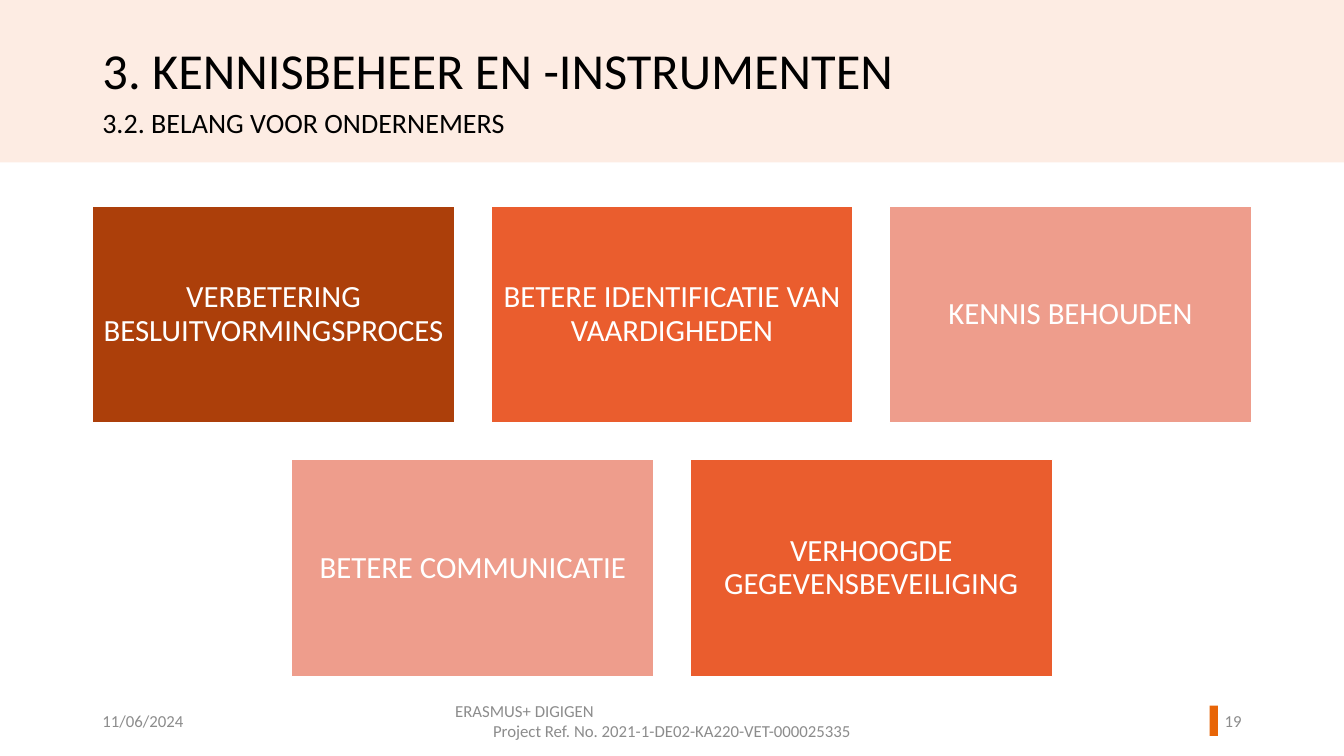
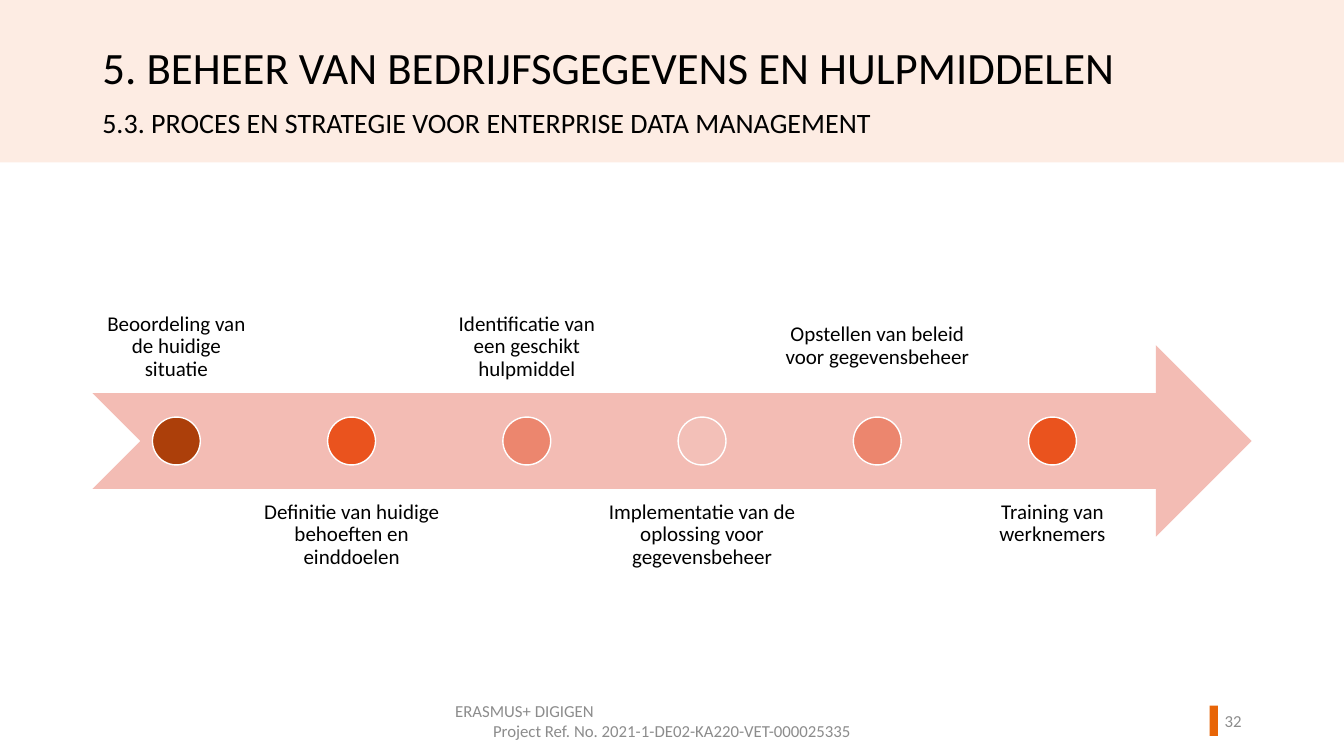
import dataclasses

import pptx
import pptx.dml.color
import pptx.enum.shapes
import pptx.enum.text
import pptx.util

SHAPE = pptx.enum.shapes.MSO_SHAPE
ALIGN = pptx.enum.text.PP_ALIGN
ANCHOR = pptx.enum.text.MSO_ANCHOR


@dataclasses.dataclass(frozen=True)
class Theme:
    font: str = "Calibri"
    # Colours
    ink: str = "000000"
    white: str = "FFFFFF"
    muted: str = "8C8C8C"
    band: str = "FDECE3"
    accent: str = "E86507"
    rust: str = "AC3F0A"
    orange: str = "EA5D2E"
    salmon: str = "EE9D8C"
    arrow: str = "F3BCB4"
    dots: tuple = ("AC3F0A", "EA531E", "EC866E", "F3C0B8", "EC866E", "EA531E")
    # Type sizes in points
    subtitle: int = 20
    card: int = 22
    label: int = 15
    footer: int = 12


class Deck:
    """Style and current slide; lengths are units of a 160 x 90 square grid."""

    COLUMNS, ROWS = 160, 90
    LEFT, WIDTH = 11, 138

    def __init__(self, theme):
        self.theme = theme
        self.prs = pptx.Presentation()
        self.prs.slide_width = pptx.util.Inches(13.33)
        self.prs.slide_height = pptx.util.Inches(7.5)
        self.layout = self.prs.slide_layouts[5]
        self.slide = None

    def box(self, x, y, w, h):
        column = self.prs.slide_width / self.COLUMNS
        row = self.prs.slide_height / self.ROWS
        return [round(v) for v in (x * column, y * row, w * column, h * row)]

    def color(self, code):
        return pptx.dml.color.RGBColor.from_string(code)

    def set_text(self, frame, lines, size, color, align=ALIGN.LEFT,
                 anchor=ANCHOR.TOP, spacing=0.9, inset=None):
        """Fill a text frame; align is one value or one per line."""
        frame.word_wrap = True
        frame.auto_size = pptx.enum.text.MSO_AUTO_SIZE.NONE
        frame.vertical_anchor = anchor
        if inset is not None:
            margin = pptx.util.Inches(inset)
            frame.margin_left = frame.margin_right = margin
            frame.margin_top = frame.margin_bottom = margin
        frame.text = lines
        aligns = align if isinstance(align, tuple) else (align,) * len(frame.paragraphs)
        for paragraph, side in zip(frame.paragraphs, aligns):
            paragraph.alignment = side
            paragraph.line_spacing = spacing
            for run in paragraph.runs:
                run.font.name = self.theme.font
                run.font.size = pptx.util.Pt(size)
                run.font.color.rgb = self.color(color)

    def shape(self, kind, area, fill, line=None):
        figure = self.slide.shapes.add_shape(kind, *self.box(*area))
        figure.shadow.inherit = False
        figure.fill.solid()
        figure.fill.fore_color.rgb = self.color(fill)
        if line:
            figure.line.color.rgb = self.color(line)
            figure.line.width = pptx.util.Pt(1)
        else:
            figure.line.fill.background()
        return figure

    def text(self, area, lines, size, color, **style):
        note = self.slide.shapes.add_textbox(*self.box(*area))
        self.set_text(note.text_frame, lines, size, color, **style)

    def furnish_layout(self):
        """Put the title band and the page number bar on the shared layout."""
        parts = (((0, 0, self.COLUMNS, 19.35), self.theme.band),
                 ((144, 84, 1, 3.6), self.theme.accent))
        for index, (area, fill) in enumerate(parts):
            part = self.shape(SHAPE.RECTANGLE, area, fill).element
            part.nvSpPr.cNvPr.id = 20 + index
            self.layout.shapes.element.insert(2 + index, part)

    def new_slide(self, title, title_size, subtitle, number, date=None):
        self.slide = self.prs.slides.add_slide(self.layout)
        if len(self.prs.slides) == 1:
            self.furnish_layout()
        # Heading
        heading = self.slide.shapes.title
        heading.left, heading.top, heading.width, heading.height = self.box(
            self.LEFT, 4.9, 130.4, 10.2)
        self.set_text(heading.text_frame, title, title_size, self.theme.ink)
        self.text((self.LEFT, 12.4, 130.4, 10.2), subtitle,
                  self.theme.subtitle, self.theme.ink)
        # Footer
        project = "ERASMUS+ DIGIGEN\nProject Ref. No. 2021-1-DE02-KA220-VET-000025335"
        entries = [(53, 54, project, (ALIGN.LEFT, ALIGN.CENTER)),
                   (141.2, 7.8, number, ALIGN.RIGHT)]
        if date:
            entries.append((self.LEFT, 36, date, ALIGN.LEFT))
        for x, w, lines, align in entries:
            self.text((x, 83.4, w, 4.8), lines, self.theme.footer, self.theme.muted,
                      align=align, anchor=ANCHOR.MIDDLE, spacing=1.0)

    def cards(self, rows, top):
        """Rows of cards, each row centred on the content width."""
        most = max(len(row) for row in rows)
        width = self.WIDTH / (most + 0.1 * (most - 1))
        gap, height = 0.1 * width, 0.6 * width
        for r, row in enumerate(rows):
            start = self.LEFT + (most - len(row)) * (width + gap) / 2
            for c, (words, fill) in enumerate(row):
                area = (start + c * (width + gap), top + r * (height + gap), width, height)
                card = self.shape(SHAPE.RECTANGLE, area, fill, self.theme.white)
                self.set_text(card.text_frame, words, self.theme.card, self.theme.white,
                              align=ALIGN.CENTER, anchor=ANCHOR.MIDDLE, inset=0.09)

    def timeline(self, steps, middle):
        """Arrow with one dot per step; labels alternate above and below."""
        height = 22.8
        dot = height / 4
        first, pitch = 21, 20.86
        self.shape(SHAPE.NOTCHED_RIGHT_ARROW,
                   (self.LEFT, middle - height / 2, self.WIDTH, height), self.theme.arrow)
        for i, ((words, width, lift), fill) in enumerate(zip(steps, self.theme.dots)):
            center = first + i * pitch
            above = i % 2 == 0
            top = middle - dot - height - lift if above else middle + dot
            self.text((center - width / 2, top, width, height), words,
                      self.theme.label, self.theme.ink, align=ALIGN.CENTER,
                      anchor=ANCHOR.BOTTOM if above else ANCHOR.TOP, inset=0.12)
            self.shape(SHAPE.OVAL, (center - dot / 2, middle - dot / 2, dot, dot),
                       fill, self.theme.white)


def main():
    theme = Theme()
    deck = Deck(theme)

    # Benefits for entrepreneurs
    deck.new_slide("3. KENNISBEHEER EN -INSTRUMENTEN", 36,
                   "3.2. BELANG VOOR ONDERNEMERS", "19", date="11/06/2024")
    benefits = [
        [("VERBETERING BESLUITVORMINGSPROCES", theme.rust),
         ("BETERE IDENTIFICATIE VAN VAARDIGHEDEN", theme.orange),
         ("KENNIS BEHOUDEN", theme.salmon)],
        [("BETERE COMMUNICATIE", theme.salmon),
         ("VERHOOGDE GEGEVENSBEVEILIGING", theme.orange)],
    ]
    deck.cards(benefits, top=24.5)

    # Data management process: words, label width, lift
    deck.new_slide("5. BEHEER VAN BEDRIJFSGEGEVENS EN HULPMIDDELEN", 32,
                   "5.3. PROCES EN STRATEGIE VOOR ENTERPRISE DATA MANAGEMENT", "32")
    process = [
        ("Beoordeling van de huidige situatie", 20, 0),
        ("Definitie van huidige behoeften en einddoelen", 24, 0),
        ("Identificatie van een geschikt hulpmiddel", 20, 0),
        ("Implementatie van de oplossing voor gegevensbeheer", 28, 0),
        ("Opstellen van beleid voor gegevensbeheer", 25.4, 1.4),
        ("Training van werknemers", 20, 0),
    ]
    deck.timeline(process, middle=52.5)

    deck.prs.save("out.pptx")


if __name__ == "__main__":
    main()
